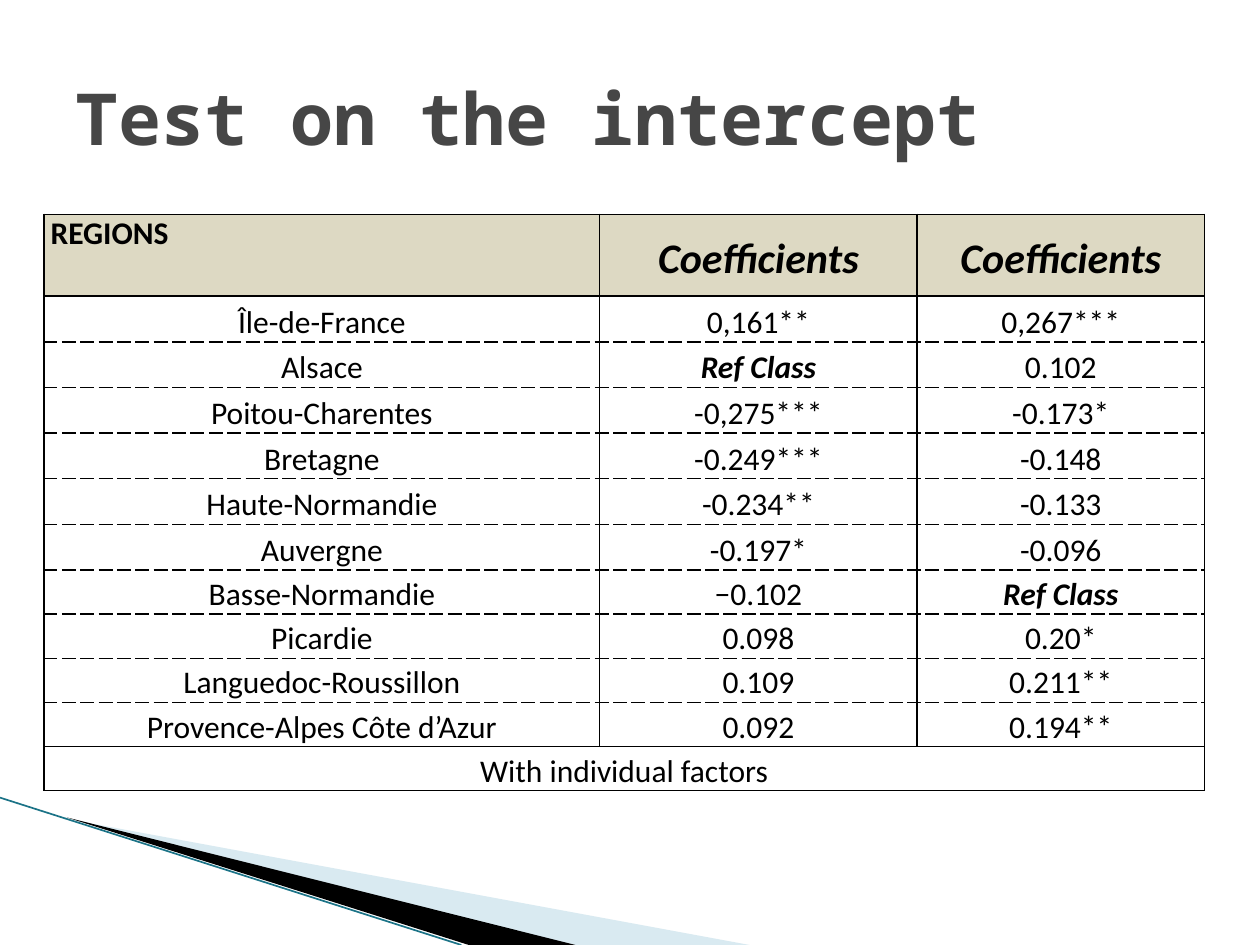
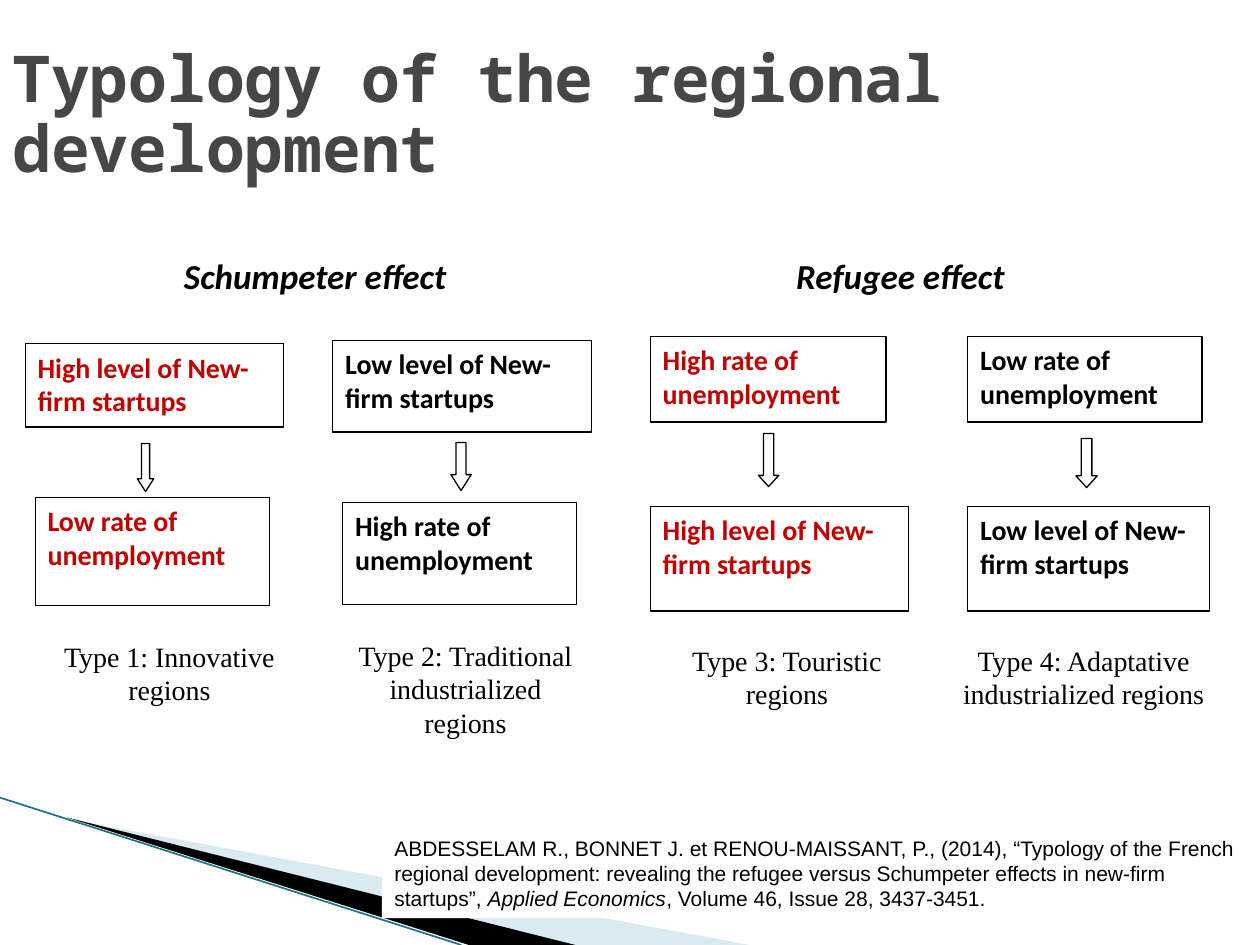
import pptx
import pptx.util
import pptx.dml.color
import pptx.enum.shapes
import pptx.enum.text
import pptx.oxml
import pptx.oxml.ns
import pptx.oxml.xmlchemy

Cm, Pt = pptx.util.Cm, pptx.util.Pt
SHAPE = pptx.enum.shapes.MSO_SHAPE
ALIGN = pptx.enum.text.PP_ALIGN
ANCHOR = pptx.enum.text.MSO_ANCHOR

# Shared look
WIDTH, HEIGHT = 25.4, 19.05
BLACK, WHITE, RED = "000000", "FFFFFF", "C00000"
TITLE_GREY, HEADER_SAND = "464646", "DDD9C3"
SWOOSH_BLUE, SWOOSH_EDGE = "A0CBDC", "1B7387"
TITLE_FONT, BODY_FONT, CAPTION_FONT, CITATION_FONT = (
    "Noto Sans Mono", "Calibri", "Times New Roman", "Arial")
INSET = (0.25, 0.13, 0.25, 0.13)

# Slide 1 content
INTERCEPT_TITLE = "Test on the intercept"
HEADER = ("REGIONS", "Coefficients", "Coefficients")
REFERENCE = "Ref Class"
REGIONS = [
    ("Île-de-France", "0,161**", "0,267***"),
    ("Alsace", REFERENCE, "0.102"),
    ("Poitou-Charentes", "-0,275***", "-0.173*"),
    ("Bretagne", "-0.249***", "-0.148"),
    ("Haute-Normandie", "-0.234**", "-0.133"),
    ("Auvergne", "-0.197*", "-0.096"),
    ("Basse-Normandie", "−0.102", REFERENCE),
    ("Picardie", "0.098", "0.20*"),
    ("Languedoc-Roussillon", "0.109", "0.211**"),
    ("Provence-Alpes Côte d’Azur", "0.092", "0.194**"),
]
TABLE_NOTE = "With individual factors"
COLUMN_WIDTHS = (11.2, 6.4, 5.79)
ROW_HEIGHTS = [1.65] + [0.92] * 6 + [0.89] * 5

# Slide 2 content: each place is left, top, width, height
TYPOLOGY_TITLE = "Typology of the regional development"
EFFECTS = [
    ("Schumpeter effect", (3.71, 5.13, 6.4, 1.17)),
    ("Refugee effect", (16.05, 5.13, 4.65, 1.12)),
]
MANY_STARTUPS = "High level of New-firm startups"
FEW_STARTUPS = "Low level of New-firm startups"
HIGH_UNEMPLOYMENT = "High rate of unemployment"
LOW_UNEMPLOYMENT = "Low rate of unemployment"
TYPES = [
    dict(color=RED, head=0.781, arrow=(2.77, 8.94, 0.33, 0.97),
         cause=(MANY_STARTUPS, (0.51, 6.93, 5.21, 1.68)),
         outcome=(LOW_UNEMPLOYMENT, (0.71, 10.03, 4.72, 2.18)),
         caption=("Type 1: Innovative regions", (0.71, 12.75, 5.41, 1.63))),
    dict(color=BLACK, head=0.781, arrow=(9.09, 8.92, 0.41, 0.97),
         cause=(FEW_STARTUPS, (6.71, 6.86, 5.21, 1.85)),
         outcome=(HIGH_UNEMPLOYMENT, (6.91, 10.13, 4.72, 2.06)),
         caption=("Type 2: Traditional industrialized regions",
                  (6.78, 12.73, 5.21, 2.31))),
    dict(color=RED, head=0.551, arrow=(15.29, 8.74, 0.41, 1.07),
         cause=(HIGH_UNEMPLOYMENT, (13.11, 6.78, 4.75, 1.73)),
         outcome=(MANY_STARTUPS, (13.11, 10.21, 5.21, 2.11)),
         caption=("Type 3: Touristic regions", (13.11, 12.83, 5.51, 1.63))),
    dict(color=BLACK, head=0.551, arrow=(21.69, 8.84, 0.43, 0.99),
         cause=(LOW_UNEMPLOYMENT, (19.51, 6.78, 4.72, 1.73)),
         outcome=(FEW_STARTUPS, (19.51, 10.21, 4.88, 2.11)),
         caption=("Type 4: Adaptative industrialized regions",
                  (18.9, 12.83, 5.89, 1.63))),
]
CITATION = [
    ("ABDESSELAM R., BONNET J. et RENOU-MAISSANT, P., (2014), “Typology of "
     "the French regional development: revealing the refugee versus "
     "Schumpeter effects in new-firm startups”, ", False),
    ("Applied Economics", True),
    (", Volume 46, Issue 28, 3437-3451.", False),
]


def rgb(color):
    return pptx.dml.color.RGBColor.from_string(color)


def cms(place):
    return [Cm(length) for length in place]


def add_run(paragraph, text, size, font, color=BLACK, bold=False, italic=False):
    run = paragraph.add_run()
    run.text = text
    run.font.size, run.font.name = Pt(size), font
    run.font.bold, run.font.italic = bold, italic
    run.font.color.rgb = rgb(color)


def prepare_text(shape, align=ALIGN.LEFT, anchor=ANCHOR.TOP, inset=INSET):
    frame = shape.text_frame
    frame.word_wrap = True
    frame.vertical_anchor = anchor
    (frame.margin_left, frame.margin_top,
     frame.margin_right, frame.margin_bottom) = cms(inset)
    frame.paragraphs[0].alignment = align
    return frame.paragraphs[0]


def paint(shape, fill, line=None):
    shape.shadow.inherit = False
    shape.fill.solid()
    shape.fill.fore_color.rgb = rgb(fill)
    if line:
        shape.line.color.rgb = rgb(line)
        shape.line.width = Pt(0.75)
    else:
        shape.line.fill.background()


def add_preset(slide, kind, place, line=None):
    shape = slide.shapes.add_shape(kind, *cms(place))
    paint(shape, WHITE, line)
    return shape


def add_swoosh(slide):
    new_element = pptx.oxml.xmlchemy.OxmlElement
    blades = [
        (SWOOSH_BLUE, 40, [(1.4, 16.52), (15.11, HEIGHT), (11.58, HEIGHT)]),
        (BLACK, 100, [(1.35, 16.48), (11.6, HEIGHT), (9.45, HEIGHT)]),
    ]
    for color, opacity, corners in blades:
        first, *others = [cms(corner) for corner in corners]
        builder = slide.shapes.build_freeform(*first)
        builder.add_line_segments(others, close=True)
        blade = builder.convert_to_shape()
        paint(blade, color)
        if opacity < 100:
            fill = blade._element.spPr.find(pptx.oxml.ns.qn("a:solidFill"))
            alpha = new_element("a:alpha")
            alpha.set("val", str(opacity * 1000))
            fill[0].append(alpha)
    edge = slide.shapes.add_connector(
        pptx.enum.shapes.MSO_CONNECTOR.STRAIGHT,
        *cms((0, 16.08, 9.3, HEIGHT)))
    edge.line.color.rgb = rgb(SWOOSH_EDGE)
    edge.line.width = Pt(0.95)
    edge._element.spPr.append(new_element("a:effectLst"))


def add_slide(deck, title, size, left, spacing):
    slide = deck.slides.add_slide(deck.slide_layouts[6])
    add_swoosh(slide)
    box = slide.shapes.add_textbox(*cms((left, 0.76, WIDTH - 2 * left, 3.18)))
    paragraph = prepare_text(box, anchor=ANCHOR.MIDDLE)
    paragraph.line_spacing = spacing
    add_run(paragraph, title, size, TITLE_FONT, TITLE_GREY, bold=True)
    return slide


def set_borders(cell, dashed_sides):
    properties = cell._tc.get_or_add_tcPr()
    for position, side in enumerate(("lnL", "lnR", "lnT", "lnB")):
        dash = "dash" if side in dashed_sides else "solid"
        properties.insert(position, pptx.oxml.parse_xml(
            f'<a:{side} {pptx.oxml.ns.nsdecls("a")} w="12700">'
            f'<a:solidFill><a:srgbClr val="{BLACK}"/></a:solidFill>'
            f'<a:prstDash val="{dash}"/></a:{side}>'))


def fill_cell(cell, text, row, column):
    cell.margin_left = cell.margin_right = Cm(0.13)
    cell.margin_top = cell.margin_bottom = 0
    paragraph = cell.text_frame.paragraphs[0]
    header, corner = row == 0, row == column == 0
    if header:
        cell.fill.solid()
        cell.fill.fore_color.rgb = rgb(HEADER_SAND)
        cell.vertical_anchor = ANCHOR.TOP if corner else ANCHOR.MIDDLE
    else:
        cell.fill.background()
        cell.vertical_anchor = ANCHOR.BOTTOM
        paragraph.space_after = Pt(10)
    if not corner:
        paragraph.alignment = ALIGN.CENTER
        paragraph.line_spacing = 1.15
    if text:
        add_run(paragraph, text, 24 if header and not corner else 18, BODY_FONT,
                bold=header or text == REFERENCE,
                italic=(header and not corner) or text == REFERENCE)
    # Dashes only between two region rows
    dashed = set()
    if 1 < row <= len(REGIONS):
        dashed.add("lnT")
    if 1 <= row < len(REGIONS):
        dashed.add("lnB")
    set_borders(cell, dashed)


def build_intercept(deck):
    slide = add_slide(deck, INTERCEPT_TITLE, 41, 1.27, 1)
    rows = [HEADER, *REGIONS, (TABLE_NOTE, "", "")]
    table = slide.shapes.add_table(
        len(rows), len(HEADER),
        *cms((0.89, 4.32, sum(COLUMN_WIDTHS), sum(ROW_HEIGHTS)))).table
    table.first_row = table.horz_banding = False
    for column, width in zip(table.columns, COLUMN_WIDTHS):
        column.width = Cm(width)
    for r, (texts, height) in enumerate(zip(rows, ROW_HEIGHTS)):
        table.rows[r].height = Cm(height)
        for c, text in enumerate(texts):
            fill_cell(table.cell(r, c), text, r, c)
    last = len(rows) - 1
    table.cell(last, 0).merge(table.cell(last, len(HEADER) - 1))


def build_typology(deck):
    slide = add_slide(deck, TYPOLOGY_TITLE, 36.9, 0, 0.9)
    # Effect headings
    for effect, place in EFFECTS:
        heading = add_preset(slide, SHAPE.RECTANGLE, place, WHITE)
        add_run(prepare_text(heading, inset=(0, 0, 0, 0)), effect, 20,
                BODY_FONT, bold=True, italic=True)
    # One column per type: cause, arrow, outcome, caption
    for kind in TYPES:
        for text, place in (kind["cause"], kind["outcome"]):
            box = add_preset(slide, SHAPE.RECTANGLE, place, BLACK)
            add_run(prepare_text(box), text, 16, BODY_FONT, kind["color"],
                    bold=True)
        arrow = add_preset(slide, SHAPE.DOWN_ARROW, kind["arrow"], BLACK)
        arrow.adjustments[0], arrow.adjustments[1] = 0.5, kind["head"]
        text, place = kind["caption"]
        caption = slide.shapes.add_textbox(*cms(place))
        add_run(prepare_text(caption, ALIGN.CENTER, ANCHOR.MIDDLE), text, 16,
                CAPTION_FONT)
    # Citation
    citation = add_preset(slide, SHAPE.RECTANGLE, (7.7, 16.71, 17.7, 1.8))
    paragraph = prepare_text(citation)
    for text, italic in CITATION:
        add_run(paragraph, text, 12, CITATION_FONT, italic=italic)


def main():
    deck = pptx.Presentation()
    deck.slide_width, deck.slide_height = Cm(WIDTH), Cm(HEIGHT)
    build_intercept(deck)
    build_typology(deck)
    deck.save("out.pptx")


if __name__ == "__main__":
    main()
